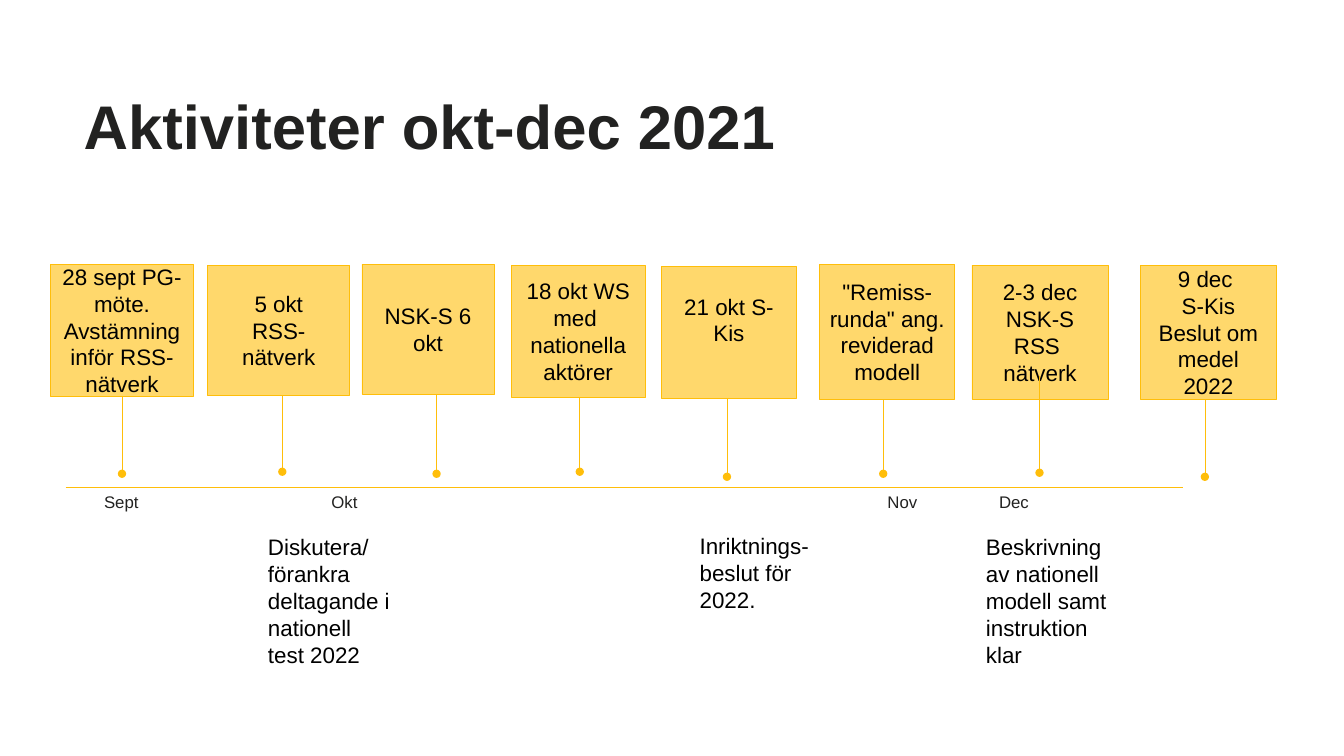
from pptx import Presentation
from pptx.dml.color import RGBColor
from pptx.enum.shapes import MSO_CONNECTOR, MSO_SHAPE
from pptx.enum.text import MSO_ANCHOR, MSO_AUTO_SIZE, PP_ALIGN
from pptx.oxml.ns import qn
from pptx.util import Inches, Pt
from lxml.etree import SubElement

GOLD = RGBColor(0xFF, 0xBE, 0x0A)
SAND = RGBColor(0xFF, 0xD8, 0x6C)
INK = RGBColor(0x22, 0x22, 0x21)
BLACK = RGBColor(0, 0, 0)


def write(frame, lines, size, color, align, bold=False):
    frame.word_wrap = True
    frame.text = "\n".join(lines)
    for para in frame.paragraphs:
        para.alignment = align
        font = para.font
        font.name, font.size, font.bold = "Arial", Pt(size), bold
        font.color.rgb = color


def draw_line(x1, y1, x2, y2, dot=False):
    line = slide.shapes.add_connector(
        MSO_CONNECTOR.STRAIGHT, Inches(x1), Inches(y1), Inches(x2), Inches(y2))
    line.line.color.rgb = GOLD
    line.line.width = Pt(0.5)
    if dot:
        SubElement(line.line._get_or_add_ln(), qn("a:tailEnd"), type="oval")
    SubElement(line._element.spPr, qn("a:effectLst"))


prs = Presentation()
prs.slide_width, prs.slide_height = Inches(13.33), Inches(7.5)
slide = prs.slides.add_slide(prs.slide_layouts[5])

# Title
title = slide.shapes.title
title.left, title.top = Inches(0.73), Inches(0.96)
title.width, title.height = Inches(10.51), Inches(1.35)
frame = title.text_frame
frame.auto_size = MSO_AUTO_SIZE.NONE
frame.vertical_anchor = MSO_ANCHOR.TOP
write(frame, ["Aktiviteter okt-dec 2021"], 44, INK, PP_ALIGN.LEFT, True)
frame.paragraphs[0].line_spacing = 0.8

# Stems down to the time axis: x, top, bottom
stems = [
    (1.21, 3.74, 4.7), (2.8, 3.85, 4.68), (4.33, 3.74, 4.7), (5.75, 3.72, 4.68),
    (7.21, 3.76, 4.73), (8.76, 3.74, 4.7), (11.95, 3.76, 4.73),
]
for x, top, end in stems:
    draw_line(x, top, x, end, dot=True)
draw_line(0.65, 4.84, 11.73, 4.84)

# Activity boxes: left, top, width, height, bottom inset, lines
boxes = [
    (0.5, 2.62, 1.42, 1.31, 0.05, ["28 sept PG-möte. Avstämning inför RSS-nätverk"]),
    (2.06, 2.63, 1.41, 1.29, 0.05, ["5 okt", "RSS-nätverk"]),
    (3.59, 2.62, 1.31, 1.29, 0.05, ["NSK-S 6 okt"]),
    (5.07, 2.63, 1.33, 1.31, 0.05, ["18 okt WS med ", "nationella aktörer"]),
    (6.56, 2.64, 1.34, 1.31, 0.3, ["21 okt S- Kis"]),
    (8.13, 2.62, 1.34, 1.34, 0.05, ['"Remiss-runda" ang. reviderad modell']),
    (11.31, 2.63, 1.35, 1.33, 0.05, ["9 dec ", "S-Kis Beslut om medel 2022"]),
    (9.64, 2.63, 1.35, 1.33, 0.05, ["2-3 dec NSK-S RSS ", "nätverk"]),
]
for x, y, w, h, inset, lines in boxes:
    box = slide.shapes.add_shape(
        MSO_SHAPE.RECTANGLE, Inches(x), Inches(y), Inches(w), Inches(h))
    box.shadow.inherit = False
    box.fill.solid()
    box.fill.fore_color.rgb = SAND
    box.line.color.rgb = GOLD
    box.line.width = Pt(0.5)
    frame = box.text_frame
    frame.vertical_anchor = MSO_ANCHOR.MIDDLE
    frame.margin_bottom = Inches(inset)
    write(frame, lines, 16, BLACK, PP_ALIGN.CENTER)

# The stem of the last box lies on top of it
draw_line(10.31, 3.73, 10.31, 4.69, dot=True)

# Month row, without style or grid
months = ["Sept", "", "Okt", "", "", "", "", "Nov", "Dec", ""]
table = slide.shapes.add_table(
    1, len(months), Inches(0.65), Inches(4.84), Inches(11.07), Inches(0.31)).table
table.first_row = table.horz_banding = False
style = table._tbl.tblPr.find(qn("a:tableStyleId"))
style.text = "{2D5ABB26-0587-4C30-8999-92F81FD0307C}"
for cell, month in zip(table.rows[0].cells, months):
    cell.fill.background()
    write(cell.text_frame, [month], 12, INK, PP_ALIGN.CENTER)

# Notes below the axis
notes = [
    (2.56, 5.24, 1.43, 1.45, ["Diskutera/", "förankra deltagande i nationell test 2022"]),
    (6.84, 5.23, 1.41, 0.91, ["Inriktnings-beslut för 2022."]),
    (9.68, 5.24, 1.41, 1.45, ["Beskrivning av nationell modell samt instruktion klar"]),
]
for x, y, w, h, lines in notes:
    note = slide.shapes.add_textbox(Inches(x), Inches(y), Inches(w), Inches(h))
    note.text_frame.auto_size = MSO_AUTO_SIZE.SHAPE_TO_FIT_TEXT
    write(note.text_frame, lines, 16, BLACK, PP_ALIGN.LEFT)

prs.save("out.pptx")
